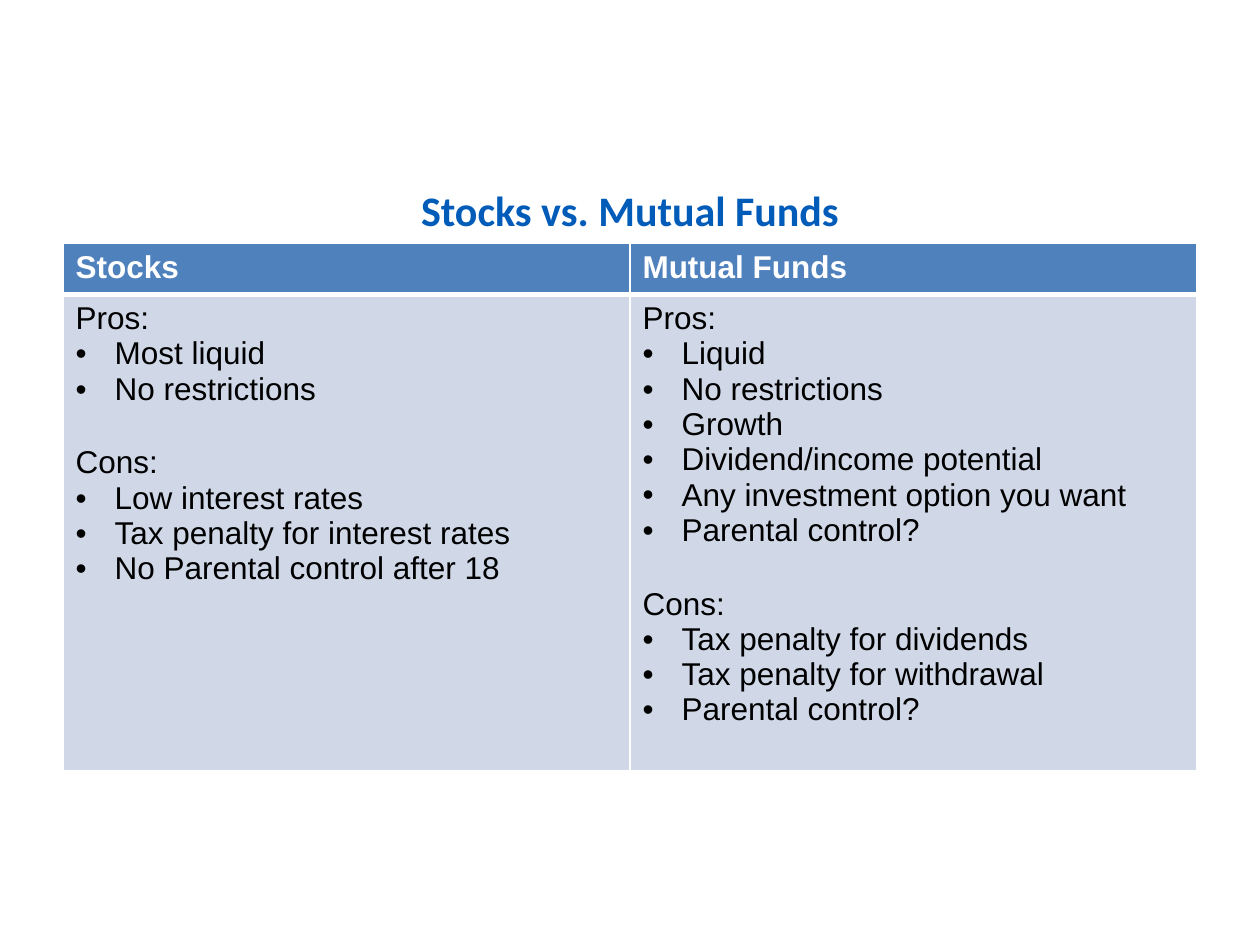
import pptx
import pptx.util
import pptx.dml.color
import pptx.enum.text
import pptx.oxml
import pptx.oxml.ns

Inches, Pt = pptx.util.Inches, pptx.util.Pt
RGB = pptx.dml.color.RGBColor
BLUE = RGB(0x00, 0x5C, 0xB8)
HEAD = RGB(0x4F, 0x81, 0xBD)
PALE = RGB(0xD0, 0xD8, 0xE8)
WHITE = RGB(0xFF, 0xFF, 0xFF)
BLACK = RGB(0x00, 0x00, 0x00)
NS = pptx.oxml.ns.nsdecls("a")

FUNDS = {
    "Stocks": {
        "Pros:": ["Most liquid", "No restrictions"],
        "Cons:": ["Low interest rates", "Tax penalty for interest rates",
                  "No Parental control after 18"],
    },
    "Mutual Funds": {
        "Pros:": ["Liquid", "No restrictions", "Growth",
                  "Dividend/income potential",
                  "Any investment option you want", "Parental control?"],
        "Cons:": ["Tax penalty for dividends", "Tax penalty for withdrawal",
                  "Parental control?"],
    },
}


def dress(cell, fill, top, base):
    """Fill a cell and give it white borders; top and base are in points."""
    cell.fill.solid()
    cell.fill.fore_color.rgb = fill
    sides = (("lnL", 1), ("lnR", 1), ("lnT", top), ("lnB", base))
    for spot, (tag, width) in enumerate(sides):
        line = pptx.oxml.parse_xml(
            f'<a:{tag} {NS} w="{Pt(width)}"><a:solidFill>'
            f'<a:srgbClr val="{WHITE}"/></a:solidFill></a:{tag}>')
        cell._tc.get_or_add_tcPr().insert(spot, line)


def write(cell, text, color, bold=False, bullet=False):
    """Add one paragraph to a cell, using its first one while still empty."""
    frame = cell.text_frame
    para = frame.add_paragraph() if frame.text else frame.paragraphs[0]
    if bullet:
        props = para._p.get_or_add_pPr()
        props.set("marL", str(Inches(0.31)))
        props.set("indent", str(-Inches(0.31)))
        props.append(pptx.oxml.parse_xml(f'<a:buFont {NS} typeface="Arial"/>'))
        props.append(pptx.oxml.parse_xml(f'<a:buChar {NS} char="•"/>'))
    para.text = text
    para.font.name, para.font.size = "Arial", Pt(18)
    para.font.bold, para.font.color.rgb = bold, color
    return para


deck = pptx.Presentation()
deck.slide_width, deck.slide_height = Inches(10), Inches(7.5)
slide = deck.slides.add_slide(deck.slide_layouts[5])
left, wide = int(deck.slide_width * 0.05), int(deck.slide_width * 0.9)

title = slide.shapes.title
title.left, title.top = left, Inches(1)
title.width, title.height = wide, Inches(0.93)
title.text_frame.text = "Stocks vs. Mutual Funds"
title.text_frame.vertical_anchor = pptx.enum.text.MSO_ANCHOR.MIDDLE
para = title.text_frame.paragraphs[0]
para.alignment = pptx.enum.text.PP_ALIGN.CENTER
para.line_spacing = Pt(57)
para.font.name, para.font.size = "Calibri", Pt(24)
para.font.bold, para.font.color.rgb = True, BLUE

rows = [Inches(0.41), Inches(3.78)]
table = slide.shapes.add_table(2, len(FUNDS), left, title.top + title.height,
                               wide, sum(rows)).table
for row, high in zip(table.rows, rows):
    row.height = high

for col, (name, lists) in enumerate(FUNDS.items()):
    head, body = table.cell(0, col), table.cell(1, col)
    dress(head, HEAD, 1, 3)
    dress(body, PALE, 3, 1)
    write(head, name, WHITE, bold=True)
    for label, items in lists.items():
        para = write(body, label, BLACK)
        if label == "Cons:":
            para.space_before = Pt(22)
        for item in items:
            write(body, item, BLACK, bullet=True)

deck.save("out.pptx")
